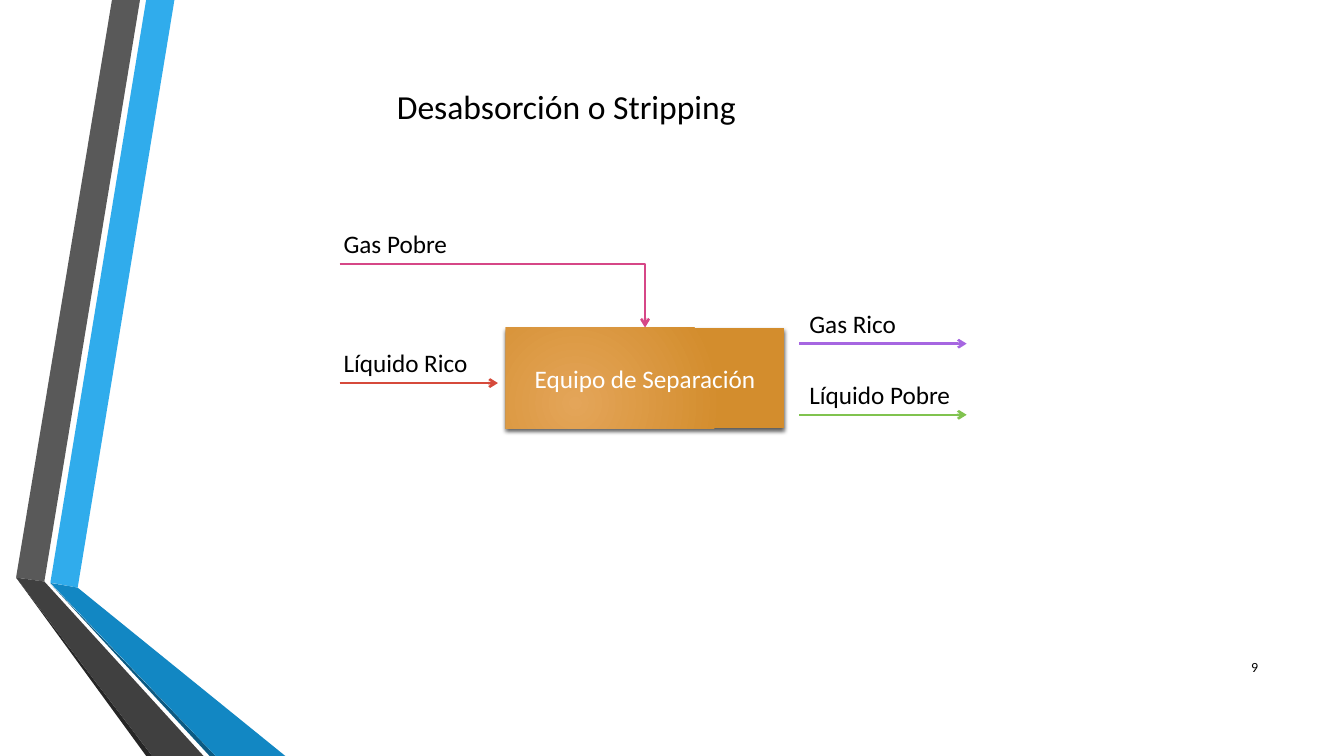
import lxml.etree
import pptx
import pptx.dml.color
import pptx.enum.shapes
import pptx.enum.text
import pptx.oxml.ns
import pptx.util

Pt = pptx.util.Pt
qn = pptx.oxml.ns.qn
ALIGN = pptx.enum.text.PP_ALIGN
ANCHOR = pptx.enum.text.MSO_ANCHOR
CONNECTOR = pptx.enum.shapes.MSO_CONNECTOR

THEME = {
    "font": "Calibri",
    "title_size": 24, "label_size": 18, "number_size": 10,
    "line_width": 1.75,
    "text": "000000", "unit_text": "FFFFFF", "shadow": "000000",
    "unit_inner": "E4A559", "unit_outer": "D38D2D",
    "sky": "30ACEC", "blue": "1287C3", "navy": "0C5A82",
    "gray": "595959", "charcoal": "404040", "black": "262626",
    "rich_liquid": "D64A3B", "lean_gas": "D64787",
    "rich_gas": "A666E1", "lean_liquid": "80C34F",
}

# Corners of the folded ribbons, back to front
RIBBONS = [
    ("sky", [(36, 416.2), (55.5, 419.8), (124.6, 0), (104.4, 0)]),
    ("gray", [(100, 0), (80, 0), (11.5, 412.6), (31.7, 415.4)]),
    ("black", [(11.5, 412.6), (104.4, 540), (108.7, 540)]),
    ("navy", [(36, 416.9), (149.8, 540), (154.1, 540)]),
    ("blue", [(36, 416.4), (154.1, 540), (203.8, 540), (55.5, 419.8)]),
    ("charcoal", [(145.4, 540), (31.7, 415.4), (11.5, 412.6), (108.7, 540)]),
]

TITLE = ("Desabsorción o Stripping", (113, 43.2, 583.2, 64.8))
UNIT = ("Equipo de Separación", (361.4, 234, 198.7, 72))
PAGE_NUMBER = ("9", (862.6, 462.2, 43.2, 28.8))

# Label, colour, arrow start, arrow end, label left, label width
STREAMS = [
    ("Líquido Rico", "rich_liquid", (242.6, 273.6), (355.7, 273.6), 238.3, 198.7),
    ("Gas Pobre", "lean_gas", (242.6, 188.6), (460.8, 234), 238.3, 118.8),
    ("Líquido Pobre", "lean_liquid", (571, 296.3), (690.5, 296.3), 571, 124.6),
    ("Gas Rico", "rich_gas", (571, 245.5), (690.5, 245.5), 571, 118.8),
]
LABEL_HEIGHT = 28.8


def rgb(role):
    return pptx.dml.color.RGBColor.from_string(THEME[role])


def add_xml(parent, tag, **attributes):
    return lxml.etree.SubElement(parent, qn(tag), attributes)


def write(shape, text, size, color="text", align=ALIGN.LEFT, anchor=ANCHOR.TOP):
    frame = shape.text_frame
    frame.word_wrap = True
    frame.vertical_anchor = anchor
    paragraph = frame.paragraphs[0]
    paragraph.alignment = align
    run = paragraph.add_run()
    run.text = text
    run.font.name = THEME["font"]
    run.font.size = Pt(THEME[size])
    run.font.color.rgb = rgb(color)


def add_text(slide, text, box, size, **layout):
    write(slide.shapes.add_textbox(*map(Pt, box)), text, size, **layout)


def add_ribbon(slide, color, corners):
    start, *rest = [(Pt(x), Pt(y)) for x, y in corners]
    builder = slide.shapes.build_freeform(*start)
    builder.add_line_segments(rest, close=True)
    ribbon = builder.convert_to_shape()
    ribbon.shadow.inherit = False
    ribbon.fill.solid()
    ribbon.fill.fore_color.rgb = rgb(color)
    ribbon.line.fill.background()


def add_unit(slide, text, box):
    """Add the equipment box with its radial gradient and drop shadow."""
    unit = slide.shapes.add_shape(
        pptx.enum.shapes.MSO_SHAPE.RECTANGLE, *map(Pt, box))
    unit.line.fill.background()
    unit.fill.gradient()
    for stop, position, color in zip(
            unit.fill.gradient_stops, (0, 1), ("unit_inner", "unit_outer")):
        stop.position = position
        stop.color.rgb = rgb(color)
    properties = unit.element.spPr
    gradient = properties.find(qn("a:gradFill"))
    gradient.remove(gradient.find(qn("a:lin")))
    circle = add_xml(gradient, "a:path", path="circle")
    add_xml(circle, "a:fillToRect", l="50000", t="100000", r="100000", b="50000")

    unit.shadow.inherit = False
    shadow = add_xml(properties.find(qn("a:effectLst")), "a:outerShdw",
                     blurRad=str(Pt(3)), dist=str(Pt(2)), dir="5400000",
                     rotWithShape="0")
    shade = add_xml(shadow, "a:srgbClr", val=THEME["shadow"])
    add_xml(shade, "a:alpha", val="64000")
    write(unit, text, "label_size", "unit_text", ALIGN.CENTER, ANCHOR.MIDDLE)


def add_arrow(slide, color, start, end):
    """Add a straight arrow, or one with a single bend if the heights differ."""
    bent = start[1] != end[1]
    kind = CONNECTOR.ELBOW if bent else CONNECTOR.STRAIGHT
    arrow = slide.shapes.add_connector(kind, *map(Pt, start + end))
    arrow.line.color.rgb = rgb(color)
    arrow.line.width = Pt(THEME["line_width"])
    properties = arrow._element.spPr
    if bent:
        properties.find(qn("a:prstGeom")).set("prst", "bentConnector2")
    add_xml(properties.find(qn("a:ln")), "a:tailEnd", type="arrow")
    add_xml(properties, "a:effectLst")


def main():
    deck = pptx.Presentation()
    deck.slide_width, deck.slide_height = Pt(960), Pt(540)
    slide = deck.slides.add_slide(deck.slide_layouts[6])

    for color, corners in RIBBONS:
        add_ribbon(slide, color, corners)
    add_text(slide, *TITLE, "title_size", align=ALIGN.CENTER, anchor=ANCHOR.MIDDLE)
    add_unit(slide, *UNIT)
    for label, color, start, end, left, width in STREAMS:
        add_arrow(slide, color, start, end)
        label_box = (left, start[1] - LABEL_HEIGHT, width, LABEL_HEIGHT)
        add_text(slide, label, label_box, "label_size")
    add_text(slide, *PAGE_NUMBER, "number_size",
             align=ALIGN.RIGHT, anchor=ANCHOR.MIDDLE)

    deck.save("out.pptx")


if __name__ == "__main__":
    main()
